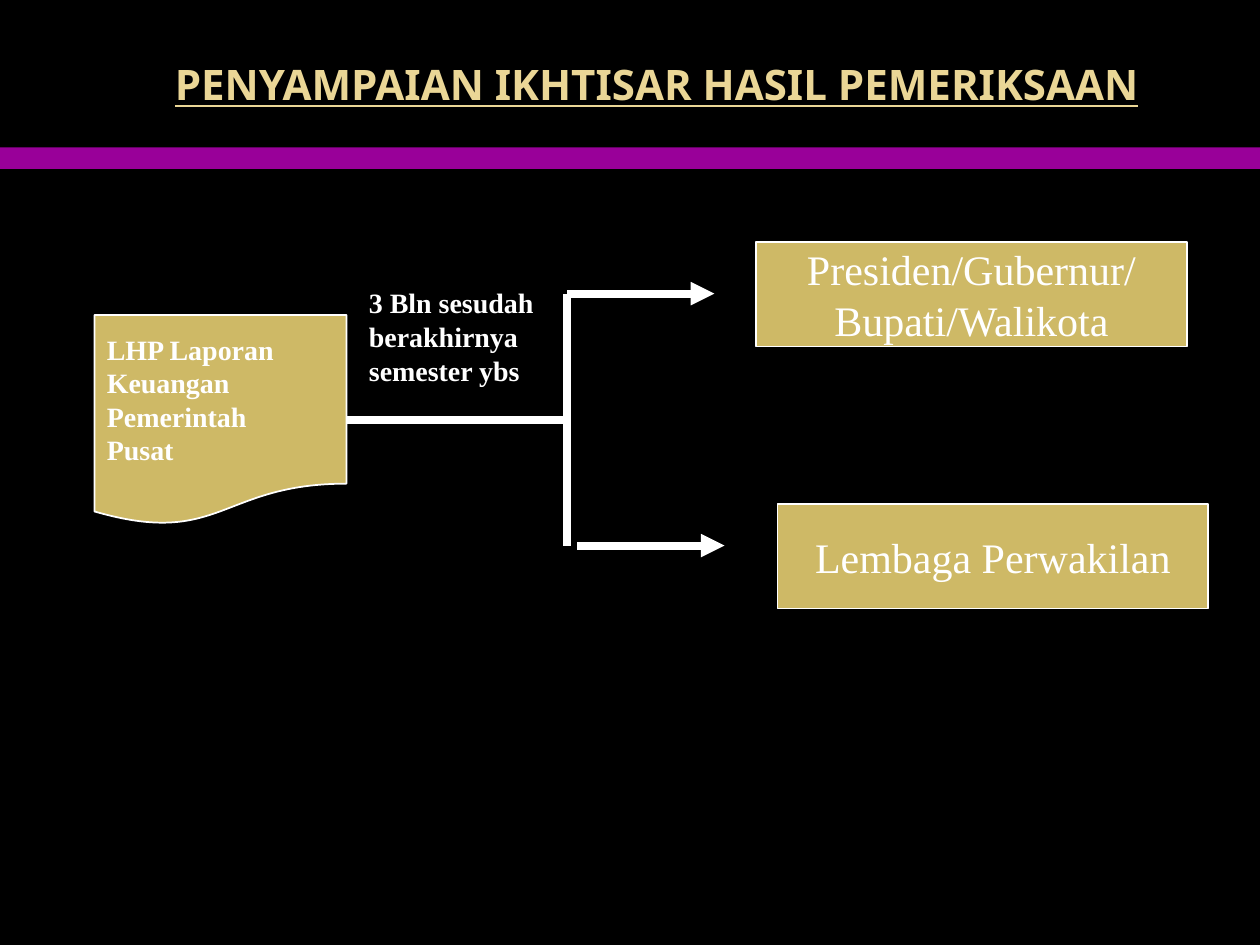
import pptx
import pptx.util
import pptx.dml.color
import pptx.enum.shapes
import pptx.enum.text
from lxml import etree
from pptx.oxml.ns import qn

Inches, Pt = pptx.util.Inches, pptx.util.Pt
RGB = pptx.dml.color.RGBColor
SHAPE = pptx.enum.shapes.MSO_SHAPE
ALIGN = pptx.enum.text.PP_ALIGN
MIDDLE = pptx.enum.text.MSO_ANCHOR.MIDDLE

COLORS = {"background": "000000", "band": "990099", "title": "EAD696",
          "box": "CEB966", "white": "FFFFFF"}
COLORS = {name: RGB.from_string(value) for name, value in COLORS.items()}


def write(sp, lines, size, bold=False, align=ALIGN.LEFT, font="Times New Roman", color="white"):
    tf = sp.text_frame
    tf.text = "\n".join(lines)
    for p in tf.paragraphs:
        p.alignment = align
        for r in p.runs:
            r.font.name = font
            r.font.size = Pt(size)
            r.font.bold = bold
            r.font.color.rgb = COLORS[color]


def add_box(shape, x, y, w, h, fill, outlined=True):
    sp = s.shapes.add_shape(shape, Inches(x), Inches(y), Inches(w), Inches(h))
    sp.shadow.inherit = False
    sp.fill.solid()
    sp.fill.fore_color.rgb = COLORS[fill]
    if outlined:
        sp.line.color.rgb = COLORS["white"]
        sp.line.width = Pt(1)
    else:
        sp.line.fill.background()
    sp.text_frame.vertical_anchor = MIDDLE
    return sp


prs = pptx.Presentation()
prs.slide_width, prs.slide_height = Inches(10), Inches(7.5)
s = prs.slides.add_slide(prs.slide_layouts[5])
s.background.fill.solid()
s.background.fill.fore_color.rgb = COLORS["background"]

# Title and band
title = s.shapes.title
title.left, title.top, title.width, title.height = map(Inches, (0.42, 0.25, 9.58, 0.83))
title.text_frame.vertical_anchor = MIDDLE
write(title, ["PENYAMPAIAN IKHTISAR HASIL PEMERIKSAAN"], 24, True, ALIGN.CENTER, "Noto Sans", "title")
title.text_frame.paragraphs[0].runs[0].font.underline = True
add_box(SHAPE.RECTANGLE, 0, 1.17, 10, 0.17, "band", outlined=False)

# Recipients
recipients = [(6.17, 4, ["Lembaga Perwakilan"]),
              (6, 1.92, ["Presiden/Gubernur/", "Bupati/Walikota"])]
for x, y, lines in recipients:
    sp = add_box(SHAPE.RECTANGLE, x, y, 3.42, 0.83, "box")
    write(sp, lines, 24, align=ALIGN.CENTER)

# Report and deadline
report = add_box(SHAPE.FLOWCHART_DOCUMENT, 0.75, 2.5, 2, 1.67, "box")
write(report, ["LHP Laporan", "Keuangan", "Pemerintah", "Pusat"], 16, True)
deadline = s.shapes.add_textbox(Inches(2.83), Inches(2.22), Inches(1.51), Inches(0.9))
deadline.text_frame.word_wrap = False
write(deadline, ["3 Bln sesudah", "berakhirnya", "semester ybs"], 16, True)

# Branching lines: start, end, arrowhead
branches = [(2.75, 3.33, 4.5, 3.33, False),
            (4.5, 2.33, 4.5, 4.33, False),
            (4.5, 2.33, 5.67, 2.33, True),
            (4.58, 4.33, 5.75, 4.33, True)]
lines = []
for x1, y1, x2, y2, arrow in branches:
    line = s.shapes.add_connector(pptx.enum.shapes.MSO_CONNECTOR.STRAIGHT,
                                  Inches(x1), Inches(y1), Inches(x2), Inches(y2))
    line.line.color.rgb = COLORS["white"]
    line.line.width = Pt(4.5)
    if arrow:
        etree.SubElement(line.line._get_or_add_ln(), qn("a:tailEnd"), type="triangle")
    etree.SubElement(line._element.spPr, qn("a:effectLst"))
    lines.append(line)
lines[0].begin_connect(report, 3)
lines[0].end_y = lines[0].begin_y

prs.save("out.pptx")
